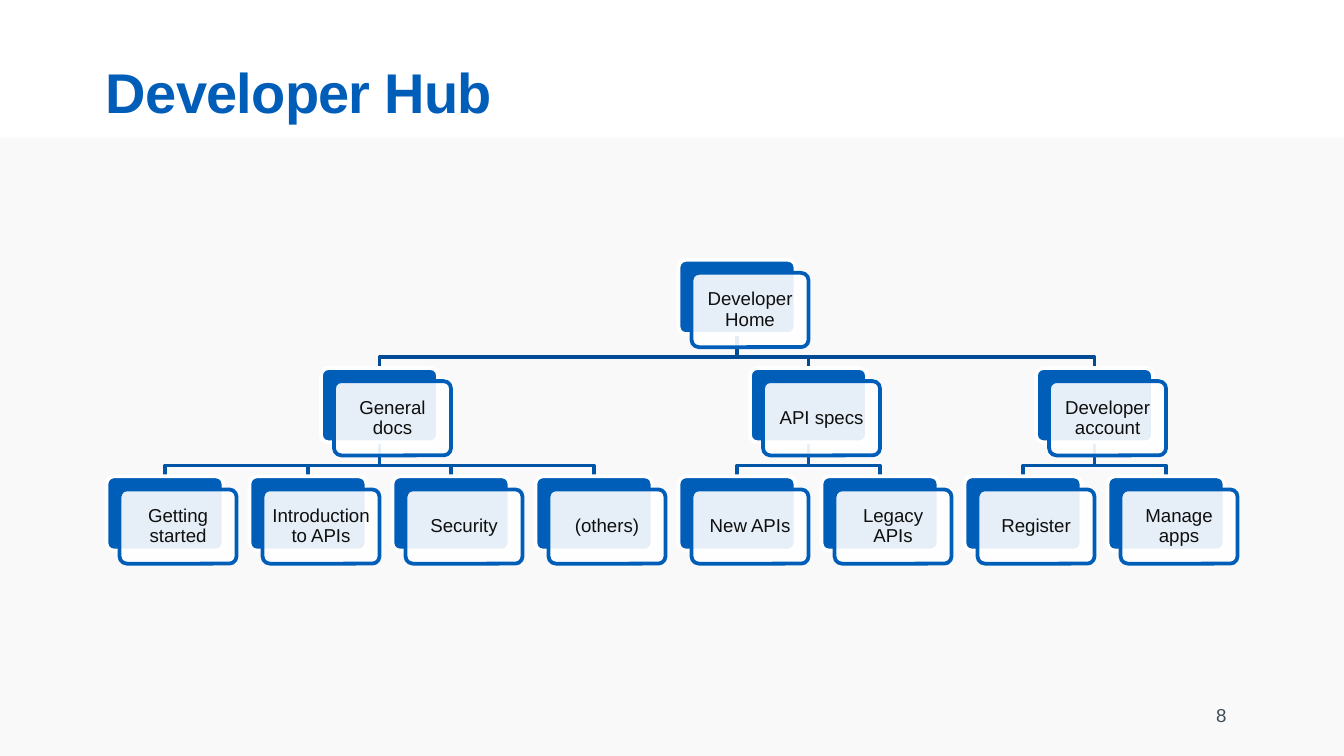
from dataclasses import dataclass

import lxml.etree
import pptx
import pptx.dml.color
import pptx.enum.shapes
import pptx.enum.text
import pptx.oxml.ns
import pptx.util

Pt = pptx.util.Pt
Shape = pptx.enum.shapes.MSO_SHAPE
Align = pptx.enum.text.PP_ALIGN


@dataclass(frozen=True)
class Theme:
    font: str = "Arial"
    blue: str = "005EB8"
    white: str = "FFFFFF"
    panel: str = "F9F9F9"
    text: str = "0F0F0F"
    footer: str = "424D58"
    links: tuple[str, ...] = ("004B93", "0055A7")
    title_size: float = 30
    body_size: float = 10
    line_width: float = 2


@dataclass(frozen=True)
class Node:
    label: str
    children: tuple["Node", ...] = ()


@dataclass(frozen=True)
class Card:
    label: str
    level: int
    center: float
    children: tuple["Card", ...] = ()

    @property
    def top(self) -> float:
        return FIRST_TOP + self.level * ROW_PITCH


THEME = Theme()
SLIDE_WIDTH, SLIDE_HEIGHT = 720, 405
PANEL_TOP = 73.6
FIRST_CENTER, COLUMN_PITCH = 88.4, 76.61
FIRST_TOP, ROW_PITCH = 139.2, 58
CARD_WIDTH, CARD_HEIGHT = 62.7, 39.8
FRONT_OFFSET = 7
BEND_DROP = 12.4

SITE = Node("Developer Home", (
    Node("General docs", (
        Node("Getting started"), Node("Introduction to APIs"),
        Node("Security"), Node("(others)"))),
    Node("API specs", (Node("New APIs"), Node("Legacy APIs"))),
    Node("Developer account", (Node("Register"), Node("Manage apps"))),
))


def color(value: str) -> pptx.dml.color.RGBColor:
    return pptx.dml.color.RGBColor.from_string(value)


def arrange(node: Node, level: int = 0, first_column: int = 0) -> tuple[Card, int]:
    if not node.children:
        center = FIRST_CENTER + first_column * COLUMN_PITCH
        return Card(node.label, level, center), first_column + 1
    cards = []
    column = first_column
    for child in node.children:
        card, column = arrange(child, level + 1, column)
        cards.append(card)
    center = (cards[0].center + cards[-1].center) / 2
    return Card(node.label, level, center, tuple(cards)), column


def write(shape, text: str, size: float, ink: str, align: Align,
          inset: float = 0, bold: bool = False):
    frame = shape.text_frame
    frame.word_wrap = True
    frame.vertical_anchor = pptx.enum.text.MSO_ANCHOR.MIDDLE
    frame.margin_left = frame.margin_right = Pt(inset)
    frame.margin_top = frame.margin_bottom = Pt(inset)
    para = frame.paragraphs[0]
    para.alignment = align
    span = para.add_run()
    span.text = text
    span.font.name = THEME.font
    span.font.size = Pt(size)
    span.font.bold = bold
    span.font.color.rgb = color(ink)
    return para


def add_box(page, kind: Shape, left: float, top: float, width: float,
            height: float, fill: str, line: str | None = None):
    box = page.shapes.add_shape(kind, Pt(left), Pt(top), Pt(width), Pt(height))
    box.shadow.inherit = False
    box.fill.solid()
    box.fill.fore_color.rgb = color(fill)
    if line is None:
        box.line.fill.background()
    else:
        box.line.color.rgb = color(line)
        box.line.width = Pt(THEME.line_width)
    return box


def add_text(page, left: float, top: float, width: float, height: float):
    return page.shapes.add_textbox(Pt(left), Pt(top), Pt(width), Pt(height))


def draw_links(page, parent: Card) -> None:
    start = parent.top + CARD_HEIGHT
    bend = start + BEND_DROP
    for child in parent.children:
        outline = page.shapes.build_freeform(Pt(parent.center), Pt(start))
        outline.add_line_segments([
            (Pt(parent.center), Pt(bend)),
            (Pt(child.center), Pt(bend)),
            (Pt(child.center), Pt(child.top)),
        ], close=False)
        link = outline.convert_to_shape()
        link.shadow.inherit = False
        link.fill.background()
        link.line.color.rgb = color(THEME.links[parent.level])
        link.line.width = Pt(THEME.line_width)
        draw_links(page, child)


def draw_card(page, card: Card) -> None:
    left = card.center - CARD_WIDTH / 2
    back = add_box(page, Shape.ROUNDED_RECTANGLE, left, card.top,
                   CARD_WIDTH, CARD_HEIGHT, THEME.blue, THEME.white)
    front = add_box(page, Shape.ROUNDED_RECTANGLE, left + FRONT_OFFSET,
                    card.top + FRONT_OFFSET, CARD_WIDTH, CARD_HEIGHT,
                    THEME.white, THEME.blue)
    for box in (back, front):
        box.adjustments[0] = 0.1
    qn = pptx.oxml.ns.qn
    fill = front._element.spPr.find(qn("a:solidFill"))
    lxml.etree.SubElement(fill[0], qn("a:alpha")).set("val", "90000")
    para = write(front, card.label, THEME.body_size, THEME.text, Align.CENTER, 3)
    para.line_spacing = 0.9
    for child in card.children:
        draw_card(page, child)


def main() -> None:
    deck = pptx.Presentation()
    deck.slide_width, deck.slide_height = Pt(SLIDE_WIDTH), Pt(SLIDE_HEIGHT)
    page = deck.slides.add_slide(deck.slide_layouts[6])

    add_box(page, Shape.RECTANGLE, 0, PANEL_TOP, SLIDE_WIDTH,
            SLIDE_HEIGHT - PANEL_TOP, THEME.panel)
    title = add_text(page, 56.8, 28, 601, 41.6)
    para = write(title, "Developer Hub", THEME.title_size, THEME.blue,
                 Align.LEFT, bold=True)
    para.runs[0].font._element.set("spc", "-40")

    root, _ = arrange(SITE)
    draw_links(page, root)
    draw_card(page, root)

    number = add_text(page, 496, 372.4, 168, 21.6)
    write(number, "8", THEME.body_size, THEME.footer, Align.RIGHT, 7.2)
    deck.save("out.pptx")


if __name__ == "__main__":
    main()
